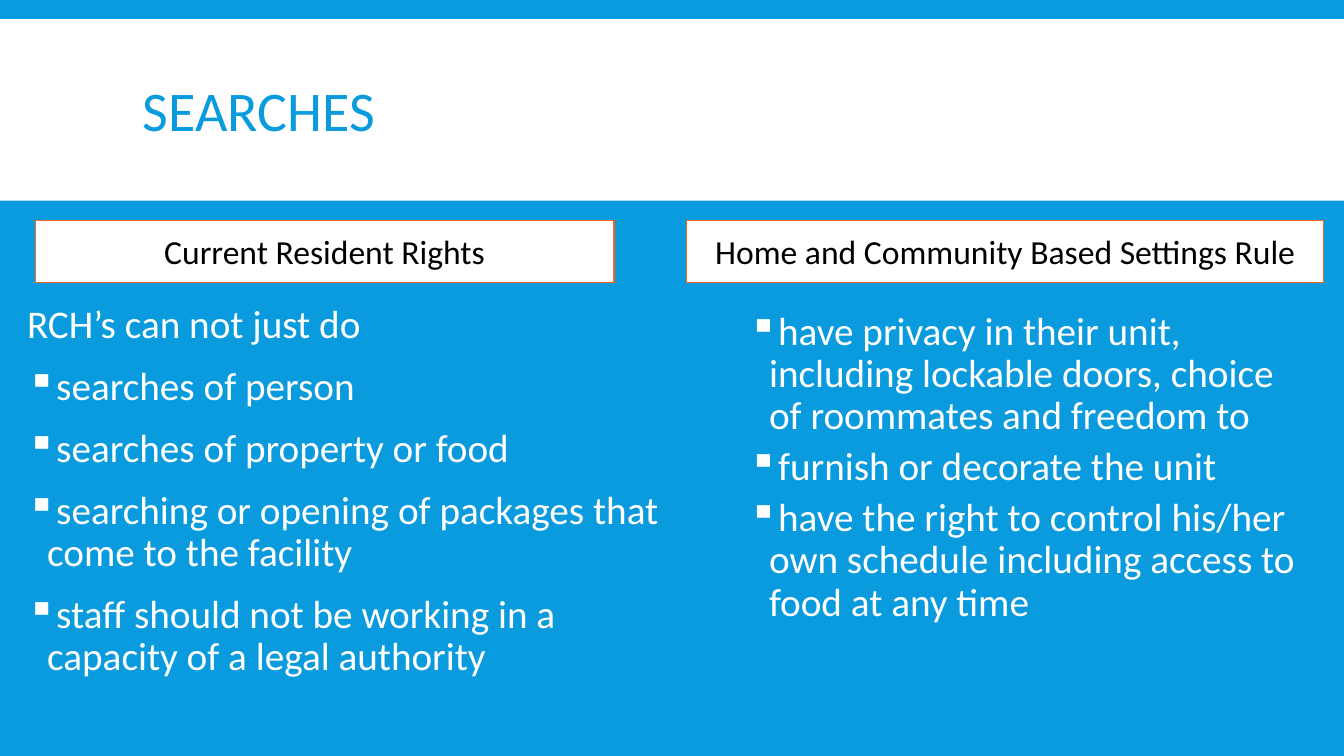
from dataclasses import dataclass

from lxml import etree
from pptx import Presentation
from pptx.dml.color import RGBColor
from pptx.enum.shapes import MSO_SHAPE
from pptx.enum.text import MSO_ANCHOR, PP_ALIGN
from pptx.oxml.ns import qn
from pptx.util import Inches, Pt

RECT = MSO_SHAPE.RECTANGLE
MIDDLE = MSO_ANCHOR.MIDDLE
CENTER = PP_ALIGN.CENTER


@dataclass(frozen=True)
class Theme:
    font: str = "Calibri"
    blue: str = "099BDD"
    white: str = "FFFFFF"
    black: str = "000000"
    orange: str = "F56617"
    title: int = 40
    body: int = 28
    label: int = 24


THEME = Theme()

RIGHTS = [
    "searches of person",
    "searches of property or food",
    "searching or opening of packages that come to the facility",
    "staff should not be working in a capacity of a legal authority",
]
RULES = [
    "have privacy in their unit, including lockable doors, choice of roommates and freedom to",
    "furnish or decorate the unit",
    "have the right to control his/her own schedule including access to food at any time",
]


def rgb(color):
    return RGBColor.from_string(color)


def style(para, size, color):
    para.font.name = THEME.font
    para.font.size = Pt(size)
    para.font.color.rgb = rgb(color)


def add_bullet(para, indent):
    props = para._p.get_or_add_pPr()
    props.set("marL", str(Inches(indent)))
    props.set("indent", str(Inches(-0.2)))
    color = etree.SubElement(props, qn("a:buClr"))
    etree.SubElement(color, qn("a:srgbClr"), val=THEME.white)
    etree.SubElement(props, qn("a:buChar"), char="▪")


def add_panel(slide, left, top, width, height, line=None):
    panel = slide.shapes.add_shape(
        RECT, Inches(left), Inches(top), Inches(width), Inches(height))
    panel.shadow.inherit = False
    panel.fill.solid()
    panel.fill.fore_color.rgb = rgb(THEME.white)
    if line:
        panel.line.color.rgb = rgb(line)
        panel.line.width = Pt(1)
    else:
        panel.line.fill.background()
    return panel


def add_label(slide, text, left, width):
    frame = add_panel(slide, left, 2.19, width, 0.61, THEME.orange).text_frame
    frame.word_wrap = True
    frame.vertical_anchor = MIDDLE
    para = frame.paragraphs[0]
    para.text = text
    para.alignment = CENTER
    style(para, THEME.label, THEME.black)


def add_frame(slide, left, top, width, height):
    box = slide.shapes.add_textbox(
        Inches(left), Inches(top), Inches(width), Inches(height))
    box.text_frame.word_wrap = True
    return box.text_frame


def add_title(slide, text):
    frame = add_frame(slide, 1.32, 0.31, 10.7, 1.65)
    frame.vertical_anchor = MIDDLE
    para = frame.paragraphs[0]
    para.text = text
    para.line_spacing = 0.85
    style(para, THEME.title, THEME.blue)


def add_list(frame, items, indent, before, after, lead=None):
    lines = [lead, *items] if lead else items
    for i, text in enumerate(lines):
        para = frame.add_paragraph() if i else frame.paragraphs[0]
        para.text = text
        para.line_spacing = 0.9
        if i:
            para.space_before = Pt(before)
        para.space_after = Pt(after)
        if text != lead:
            add_bullet(para, indent)
        style(para, THEME.body, THEME.white)


def main():
    deck = Presentation()
    deck.slide_width, deck.slide_height = Inches(13.33), Inches(7.5)
    slide = deck.slides.add_slide(deck.slide_layouts[6])
    slide.background.fill.solid()
    slide.background.fill.fore_color.rgb = rgb(THEME.blue)

    # Title band
    add_panel(slide, 0, 0.19, 13.33, 1.8)
    add_title(slide, "SEARCHES")

    # Left column
    add_list(add_frame(slide, 0.17, 2.97, 6.5, 4.38), RIGHTS,
             indent=0.2, before=12, after=2, lead="RCH’s can not just do")
    add_label(slide, "Current Resident Rights", 0.35, 5.74)

    # Right column
    add_list(add_frame(slide, 7.08, 3.04, 5.9, 4.31), RULES,
             indent=0.45, before=2, after=4)
    add_label(slide, "Home and Community Based Settings Rule", 6.81, 6.32)

    deck.save("out.pptx")


if __name__ == "__main__":
    main()
